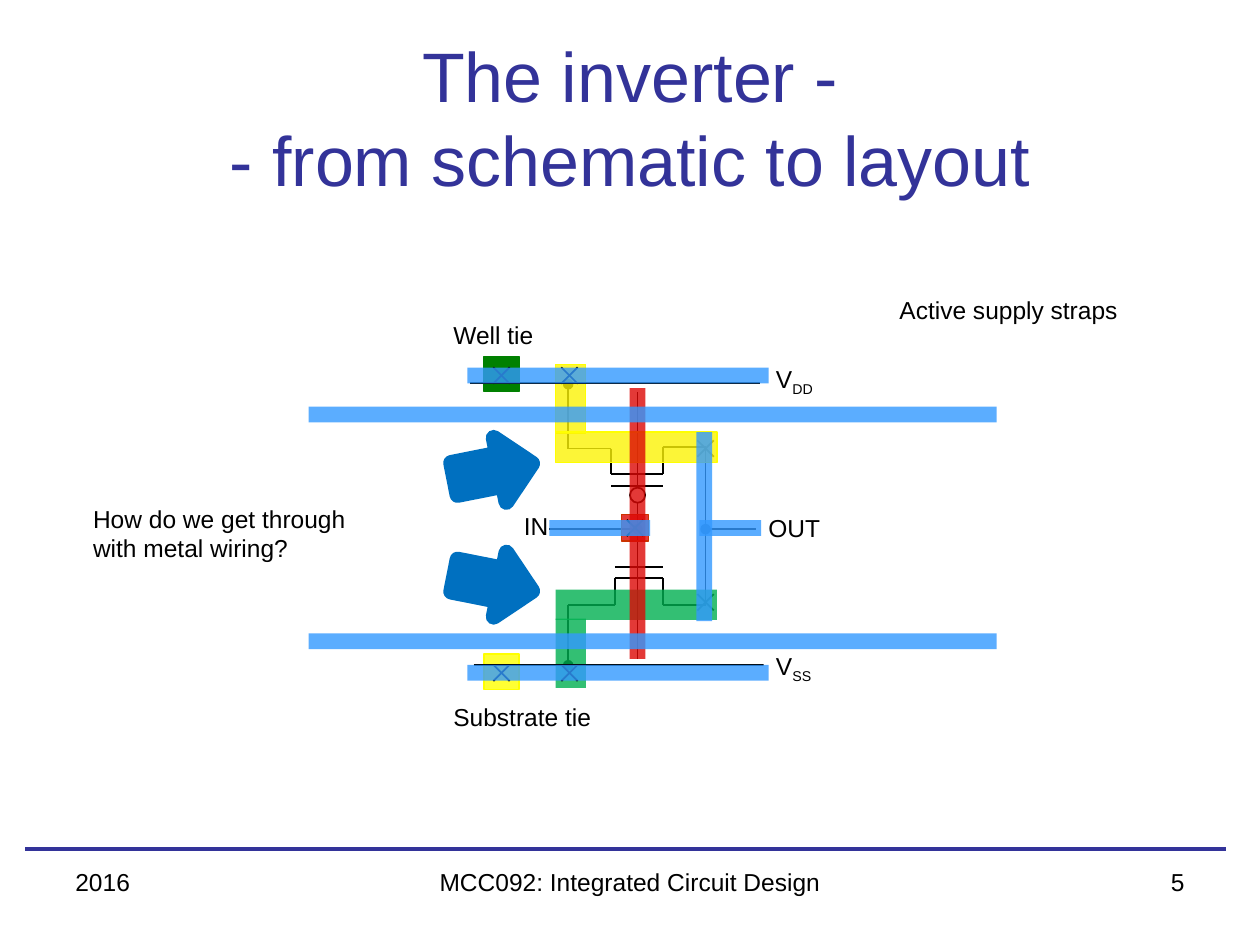
from itertools import pairwise
from pptx import Presentation
from pptx.dml.color import RGBColor
from pptx.enum.shapes import MSO_CONNECTOR, MSO_SHAPE
from pptx.enum.text import MSO_ANCHOR, PP_ALIGN
from pptx.oxml.ns import qn
from pptx.oxml.xmlchemy import OxmlElement
from pptx.util import Inches, Pt

STRAIGHT = MSO_CONNECTOR.STRAIGHT
RECT, OVAL, ARROW = MSO_SHAPE.RECTANGLE, MSO_SHAPE.OVAL, MSO_SHAPE.RIGHT_ARROW
LEFT, CENTER, RIGHT = PP_ALIGN.LEFT, PP_ALIGN.CENTER, PP_ALIGN.RIGHT
TOP, MIDDLE = MSO_ANCHOR.TOP, MSO_ANCHOR.MIDDLE

BLACK = RGBColor(0x00, 0x00, 0x00)
WHITE = RGBColor(0xFF, 0xFF, 0xFF)
NAVY = RGBColor(0x33, 0x33, 0x99)
METAL = RGBColor(0x33, 0x99, 0xFF)
POLY = RGBColor(0xDD, 0x08, 0x06)
CONTACT_EDGE = RGBColor(0xCC, 0x33, 0x00)
N_DIFF = RGBColor(0x00, 0xB0, 0x50)
P_DIFF = RGBColor(0xFC, 0xF3, 0x05)
YELLOW = RGBColor(0xFF, 0xFF, 0x00)
WELL = RGBColor(0x00, 0x80, 0x00)
ARROW_BLUE = RGBColor(0x00, 0x70, 0xC0)

SRC, GATE, DRAIN, TIE = 4.51, 5.06, 5.6, 3.98
VDD, VSS, MID = 2.98, 5.34, 4.2
P_ROW, N_ROW = 3.56, 4.8
P_LEFT, N_LEFT, CH_RIGHT = 4.85, 4.88, 5.26
BAND, TIE_SIZE, CROSS, DOT = 0.24, 0.28, 0.13, 0.07

TEXTS = [
    ("The inverter -\v- from schematic to layout", 0.5, 0.3, 9, 1.25, CENTER),
    ("Well tie", 3.5, 2.49, 2.4, 0.38, LEFT),
    ("Substrate tie", 3.5, 5.52, 3.07, 0.41, LEFT),
    ("How do we get through with metal wiring?", 0.64, 3.95, 2.4, 0.74, LEFT),
    ("Active supply straps", 7.04, 2.29, 2.4, 0.74, LEFT),
    ("IN", 4.06, 4.01, 0.72, 0.52, LEFT),
    ("OUT", 6, 4.02, 0.89, 0.36, LEFT),
    ("2016", 0.5, 6.83, 2.33, 0.52, LEFT),
    ("MCC092: Integrated Circuit Design", 3.19, 6.83, 3.62, 0.52, CENTER),
    ("5", 7.17, 6.83, 2.33, 0.52, RIGHT),
]
SUPPLIES = [("DD", 2.84, 1.07, 0.65), ("SS", 5.12, 0.65, 0.4)]

SCHEMATIC = [
    [(GATE, 3.11), (GATE, 5.23)],
    [(SRC, 3.03), (SRC, P_ROW), (P_LEFT, P_ROW), (P_LEFT, 3.76),
     (CH_RIGHT, 3.76), (CH_RIGHT, 3.55), (DRAIN, 3.55), (DRAIN, N_ROW)],
    [(P_LEFT, 3.86), (CH_RIGHT, 3.86)],
    [(SRC, 5.29), (SRC, N_ROW), (N_LEFT, N_ROW), (N_LEFT, 4.59),
     (CH_RIGHT, 4.59), (CH_RIGHT, N_ROW), (DRAIN, N_ROW)],
    [(N_LEFT, 4.5), (CH_RIGHT, 4.5)],
    [(4.36, MID), (GATE, MID)],
    [(DRAIN, MID), (6, MID)],
]
DOTS = [(DRAIN, MID), (SRC, 5.28), (SRC, 3.05), (GATE, MID)]
SUPPLY_WIRES = [[(3.73, 3.04), (6.03, 3.04)], [(3.76, 5.28), (6.07, 5.28)]]
CROSSES = [(TIE, VDD), (TIE, VSS), (4.52, VDD), (4.52, VSS),
           (DRAIN, P_ROW), (DRAIN, 4.78)]
ARROWS = [(3.48, -11.2), (4.37, 11.2)]
METAL_LINES = [
    [(5.55, 4.19), (6.04, 4.19)],
    [(3.71, VDD), (6.1, VDD)],
    [(3.71, VSS), (6.1, VSS)],
]
TOP_LINES = [
    ([(5.59, 3.43), (5.59, 4.93)], METAL),
    ([(GATE, 3.08), (GATE, 5.23)], POLY),
    ([(4.36, 4.19), (5.16, 4.19)], METAL),
    ([(2.45, 3.29), (7.91, 3.29)], METAL),
    ([(2.45, 5.09), (7.91, 5.09)], METAL),
]

prs = Presentation()
prs.slide_width, prs.slide_height = Inches(10), Inches(7.5)
shapes = prs.slides.add_slide(prs.slide_layouts[6]).shapes


def fade(s):
    for clr in s._element.spPr.iter(qn("a:srgbClr")):
        alpha = OxmlElement("a:alpha")
        alpha.set("val", "80000")
        clr.append(alpha)


def wire(points, color=BLACK, width=1, faded=False):
    for start, end in pairwise(points):
        s = shapes.add_connector(STRAIGHT, *map(Inches, start + end))
        s.line.color.rgb = color
        s.line.width = Pt(width)
        if faded:
            fade(s)
        s._element.spPr.append(OxmlElement("a:effectLst"))


def block(kind, x, y, w, h, fill, edge=None, width=0.75, faded=False):
    s = shapes.add_shape(kind, *map(Inches, (x, y, w, h)))
    s.shadow.inherit = False
    s.fill.solid()
    s.fill.fore_color.rgb = fill
    if faded:
        fade(s)
    if edge is None:
        s.line.fill.background()
    else:
        s.line.color.rgb = edge
        s.line.width = Pt(width)
    return s


def centred(kind, x, y, size, *style, **options):
    return block(kind, x - size / 2, y - size / 2, size, size, *style, **options)


def cross(x, y):
    d = CROSS / 2
    wire([(x - d, y - d), (x + d, y + d)])
    wire([(x - d, y + d), (x + d, y - d)])


def label(text, x, y, w, h, align=LEFT, size=14, color=BLACK, anchor=TOP):
    s = shapes.add_textbox(*map(Inches, (x, y, w, h)))
    tf = s.text_frame
    tf.word_wrap = True
    tf.vertical_anchor = anchor
    p = tf.paragraphs[0]
    p.text = text
    p.alignment = align
    p.font.name, p.font.size = "Arial", Pt(size)
    p.font.color.rgb = color
    return s


wire([(0.2, 6.74), (9.73, 6.74)], NAVY, 2.25)
for points in SCHEMATIC:
    wire(points)
centred(OVAL, GATE, 3.93, 0.12, WHITE, BLACK, 1)
for x, y in DOTS:
    centred(OVAL, x, y, DOT, BLACK, BLACK, 1)

block(RECT, 4.41, 4.91, BAND, 0.55, N_DIFF, faded=True)
block(RECT, 4.41, 2.89, BAND, 0.55, P_DIFF, YELLOW, faded=True)
centred(RECT, TIE, 2.97, TIE_SIZE, WELL, WELL)
centred(RECT, TIE, 5.33, TIE_SIZE, YELLOW, YELLOW, faded=True)
for points in SUPPLY_WIRES:
    wire(points)

for suffix, y, w, h in SUPPLIES:
    s = label("V", 6.06, y, w, h)
    s.fill.solid()
    s.fill.fore_color.rgb = WHITE
    r = s.text_frame.paragraphs[0].add_run()
    r.text = suffix
    r.font._element.set("baseline", "-25000")
title, *labels = TEXTS
label(*title, size=40, color=NAVY, anchor=MIDDLE)
for item in labels:
    label(*item)

for x, y in CROSSES:
    cross(x, y)
for y, angle in ARROWS:
    block(ARROW, 3.6, y, 0.63, 0.52, ARROW_BLUE, ARROW_BLUE, 9).rotation = angle
centred(RECT, 5.04, 4.19, 0.21, POLY, CONTACT_EDGE, faded=True)
cross(5.04, 4.19)

for points in METAL_LINES:
    wire(points, METAL, 9, True)
block(RECT, 4.41, 4.68, 1.28, BAND, N_DIFF, faded=True)
block(RECT, 4.41, 3.43, 1.28, BAND, P_DIFF, YELLOW, faded=True)
for points, color in TOP_LINES:
    wire(points, color, 9, True)

prs.save("out.pptx")
